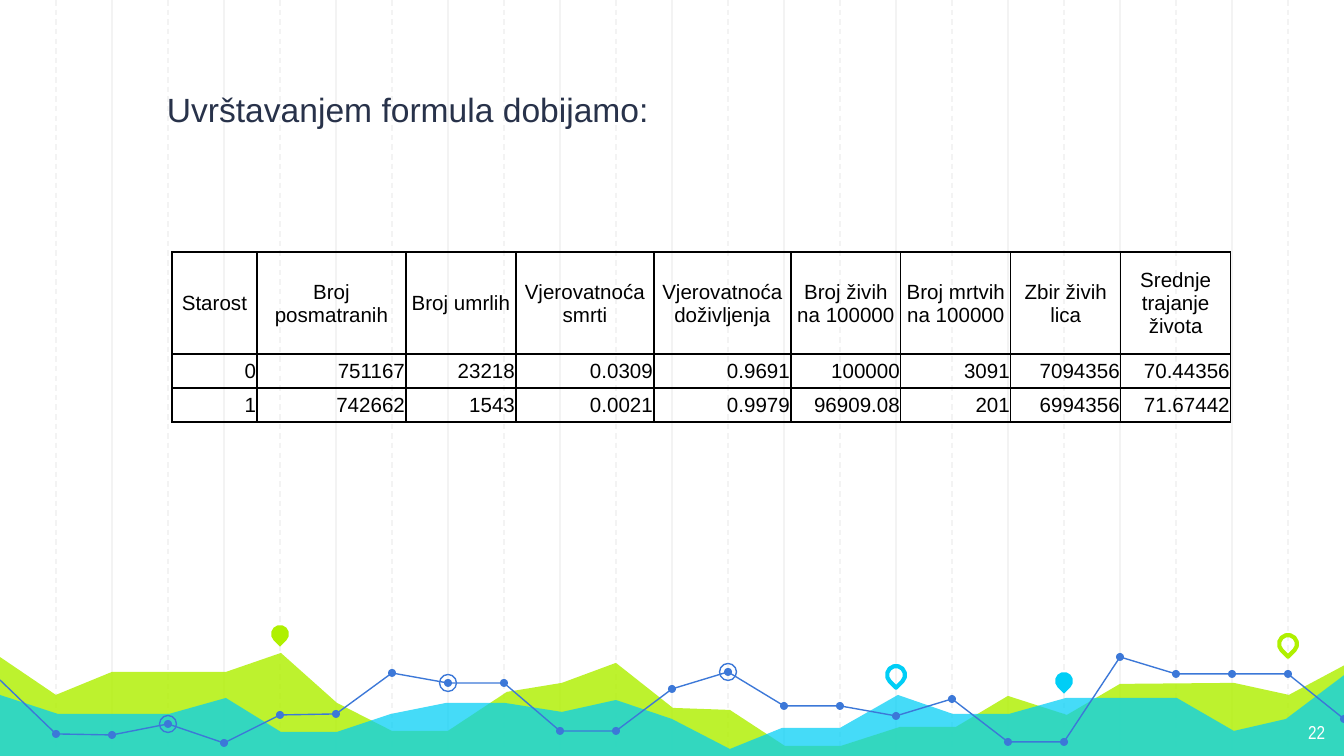
"""Build a slide with a life table above a decorative chart landscape."""
from lxml import etree
from pptx import Presentation
from pptx.dml.color import RGBColor
from pptx.enum import dml, shapes, text
from pptx.oxml import ns
from pptx.util import Pt

PX = 914400 / 134.4
WIDTH, HEIGHT = 1344, 756
STEP = 56
WHITE = RGBColor(0xFF, 0xFF, 0xFF)
BLACK = RGBColor(0x00, 0x00, 0x00)
NAVY = RGBColor(0x28, 0x32, 0x4A)
GRID = RGBColor(0xF3, 0xF3, 0xF3)
LIME = RGBColor(0xAF, 0xF0, 0x00)
CYAN = RGBColor(0x00, 0xCE, 0xF6)
BLUE = RGBColor(0x3C, 0x78, 0xD8)

TITLE = "Uvrštavanjem formula dobijamo:"
PAGE = "22"
LIFE_TABLE = [
    ["Starost", "Broj posmatranih", "Broj umrlih", "Vjerovatnoća smrti",
     "Vjerovatnoća doživljenja", "Broj živih na 100000",
     "Broj mrtvih na 100000", "Zbir živih lica", "Srednje trajanje života"],
    ["0", "751167", "23218", "0.0309", "0.9691", "100000", "3091", "7094356", "70.44356"],
    ["1", "742662", "1543", "0.0021", "0.9979", "96909.08", "201", "6994356", "71.67442"],
]
COLUMN_WIDTHS = [85, 149, 110, 138, 137, 110, 110, 110, 110]
ROW_HEIGHTS = [102, 34, 34]

LIME_HILLS = [
    (-3, 655), (56, 695), (112, 672), (226, 672), (281, 653), (337, 703), (392, 731),
    (448, 731), (507, 692), (562, 683), (616, 663), (673, 708), (730, 710), (785, 746),
    (841, 746), (900, 727), (956, 727), (1008, 696), (1067, 715), (1120, 684),
    (1234, 683), (1289, 695), (1347, 664), (1346, 758), (-4, 758)]
CYAN_HILLS = [
    (-3, 694), (58, 714), (169, 714), (226, 698), (281, 732), (337, 732), (391, 714),
    (446, 703), (505, 703), (562, 712), (616, 700), (672, 719), (730, 749), (782, 728),
    (840, 728), (898, 695), (953, 714), (1009, 714), (1066, 698), (1177, 698),
    (1234, 731), (1286, 719), (1347, 673), (1347, 759), (-4, 759)]
HILLS = [(LIME_HILLS, LIME, 82), (CYAN_HILLS, CYAN, 73)]
TREND = [680, 734, 735, 724, 743, 715, 714, 673, 683, 683, 731, 731, 689, 672, 706,
         706, 716, 699, 742, 742, 657, 674, 674, 674, 719]
TREND_PARTS = [(0, 11), (11, 20), (20, 24)]
RINGED = [8, 3, 13]
PINS = [(280, 634, LIME, True), (896, 675, CYAN, False),
        (1064, 681, CYAN, True), (1288, 644, LIME, False)]


def emu(*lengths):
    return [round(length * PX) for length in lengths]


def paint(shape, fill=None, line=None, weight=0.75):
    shape.shadow.inherit = False
    if fill is None:
        shape.fill.background()
    else:
        shape.fill.solid()
        shape.fill.fore_color.rgb = fill
    if line is None:
        shape.line.fill.background()
    else:
        shape.line.color.rgb = line
        shape.line.width = Pt(weight)


def add_grid_line(slide, column):
    x = column * STEP
    rule = slide.shapes.add_connector(shapes.MSO_CONNECTOR.STRAIGHT, *emu(x, 0, x, HEIGHT))
    rule.line.color.rgb = GRID
    rule.line.width = Pt(0.75)
    if column % 2:
        rule.line.dash_style = dml.MSO_LINE.DASH
    etree.SubElement(rule._element.spPr, ns.qn("a:effectLst"))


def add_path(slide, points, close):
    builder = slide.shapes.build_freeform(*points[0], scale=PX)
    builder.add_line_segments(points[1:], close=close)
    return builder.convert_to_shape()


def add_centred(slide, kind, x, y, size):
    return slide.shapes.add_shape(kind, *emu(x - size / 2, y - size / 2, size, size))


def write(frame, content, align, **font):
    paragraph = frame.paragraphs[0]
    paragraph.alignment = align
    run = paragraph.add_run()
    run.text = content
    run.font.color.rgb = font.pop("color")
    for key, value in font.items():
        setattr(run.font, key, value)


def add_label(slide, place, margins, content, align, **font):
    frame = slide.shapes.add_textbox(*emu(*place)).text_frame
    frame.word_wrap = True
    for side, margin in zip(("left", "top", "right", "bottom"), emu(*margins)):
        setattr(frame, f"margin_{side}", margin)
    write(frame, content, align, **font)


def border(cell):
    properties = cell._tc.get_or_add_tcPr()
    for side in "LRTB":
        edge = etree.SubElement(properties, ns.qn(f"a:ln{side}"), w=str(Pt(0.75)))
        solid = etree.SubElement(edge, ns.qn("a:solidFill"))
        etree.SubElement(solid, ns.qn("a:srgbClr"), val=str(BLACK))


def add_life_table(slide):
    place = emu(172, 252, sum(COLUMN_WIDTHS), sum(ROW_HEIGHTS))
    table = slide.shapes.add_table(len(ROW_HEIGHTS), len(COLUMN_WIDTHS), *place).table
    table.first_row = table.horz_banding = False
    for column, width in zip(table.columns, emu(*COLUMN_WIDTHS)):
        column.width = width
    for row, height in zip(table.rows, emu(*ROW_HEIGHTS)):
        row.height = height
    edge = emu(1)[0]
    layout = {"margin_left": edge, "margin_right": edge, "margin_top": edge,
              "margin_bottom": 0, "vertical_anchor": text.MSO_ANCHOR.MIDDLE}
    for r, values in enumerate(LIFE_TABLE):
        align = text.PP_ALIGN.RIGHT if r else text.PP_ALIGN.CENTER
        for c, value in enumerate(values):
            cell = table.cell(r, c)
            for key, setting in layout.items():
                setattr(cell, key, setting)
            border(cell)
            cell.fill.background()
            write(cell.text_frame, value, align, size=Pt(11), name="Arial", color=BLACK)


def main():
    deck = Presentation()
    deck.slide_width, deck.slide_height = emu(WIDTH, HEIGHT)
    slide = deck.slides.add_slide(deck.slide_layouts[6])
    slide.background.fill.solid()
    slide.background.fill.fore_color.rgb = WHITE

    for column in range(1, WIDTH // STEP):
        add_grid_line(slide, column)
    for points, color, opacity in HILLS:
        hills = add_path(slide, points, True)
        paint(hills, fill=color)
        tint = hills._element.spPr.find(".//" + ns.qn("a:srgbClr"))
        etree.SubElement(tint, ns.qn("a:alpha"), val=str(opacity * 1000))
    for x, y, color, filled in PINS:
        pin = add_centred(slide, shapes.MSO_SHAPE.TEAR, x, y, 18)
        pin.rotation = 135
        paint(pin, fill=color if filled else None, line=None if filled else color, weight=2.25)

    trend = [(i * STEP, y) for i, y in enumerate(TREND)]
    for first, last in TREND_PARTS:
        paint(add_path(slide, trend[first:last + 1], False), line=BLUE)
    for x, y in trend[1:]:
        paint(add_centred(slide, shapes.MSO_SHAPE.OVAL, x, y, 8), fill=BLUE)
    for i in RINGED:
        paint(add_centred(slide, shapes.MSO_SHAPE.OVAL, *trend[i], 17), line=BLUE)

    add_label(slide, (137, 76, 1142, 485), (30, 13, 13, 13), TITLE, text.PP_ALIGN.LEFT,
              size=Pt(18), name="Arial", color=NAVY)
    add_label(slide, (1258, 710, 80, 46), (13, 13, 13, 13), PAGE, text.PP_ALIGN.RIGHT,
              size=Pt(10), name="Arial Narrow", color=WHITE)
    add_life_table(slide)
    deck.save("out.pptx")


if __name__ == "__main__":
    main()
